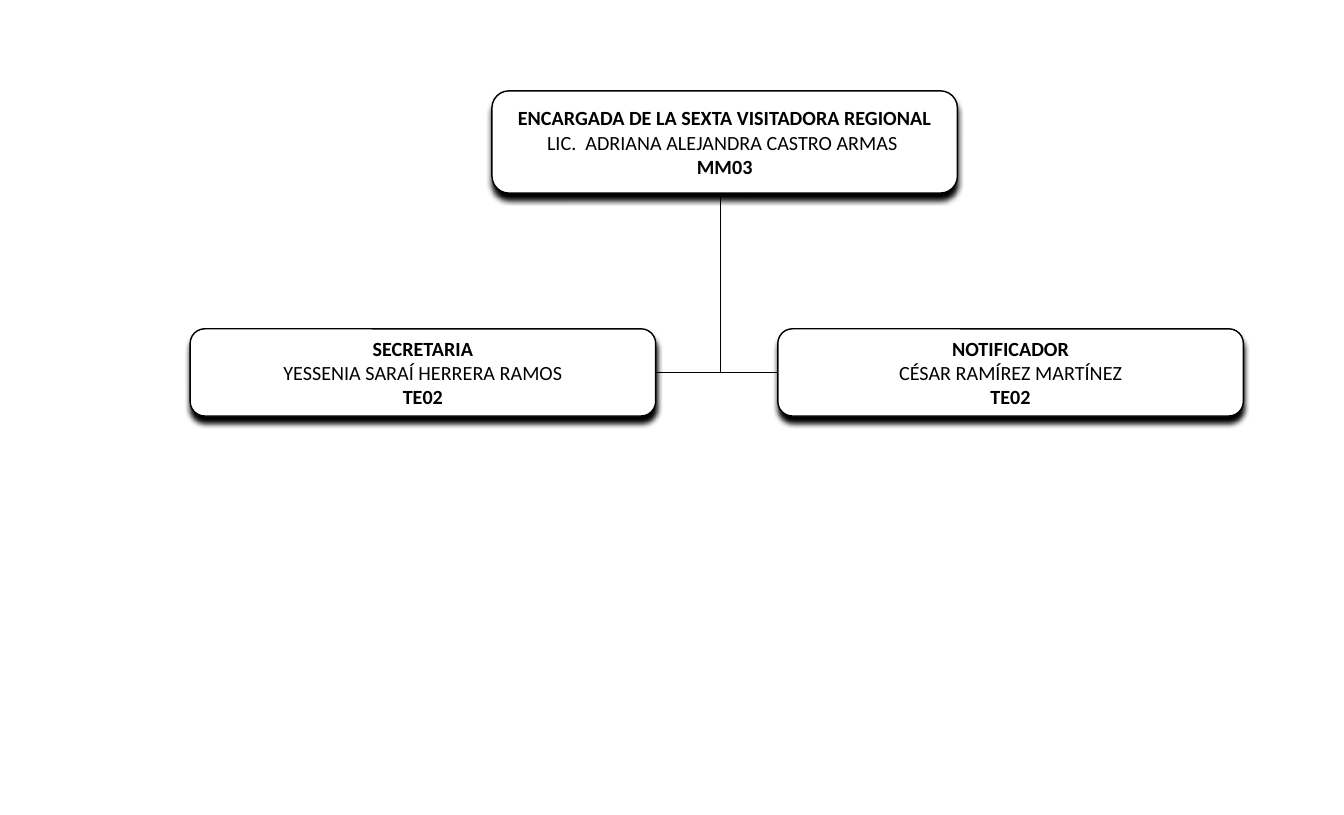
from dataclasses import dataclass

from lxml.etree import SubElement
from pptx import Presentation
from pptx.dml.color import RGBColor
from pptx.enum.shapes import MSO_CONNECTOR as Connector, MSO_SHAPE as Shape
from pptx.enum.text import MSO_ANCHOR as Anchor, PP_ALIGN as Align
from pptx.oxml.ns import qn
from pptx.util import Cm, Pt


@dataclass(frozen=True)
class Theme:
    """Colours, type and line sizes of the chart."""
    ink: str = "000000"
    paper: str = "FFFFFF"
    font: str = "Calibri"
    text_size: float = 14
    border: float = 1
    link: float = 0.75
    shadow: float = 4


class OrgChart:
    """Draws posts and links on one slide in one style."""

    def __init__(self, slide, theme):
        """Keep the slide and its style."""
        self.slide, self.theme = slide, theme
        self.ink = RGBColor.from_string(theme.ink)
        self.paper = RGBColor.from_string(theme.paper)

    def post(self, left, top, height, lines, width=11.43):
        """Add a rounded box with title, holder and grade."""
        box = self.slide.shapes.add_shape(
            Shape.ROUNDED_RECTANGLE, Cm(left), Cm(top), Cm(width), Cm(height))
        box.fill.solid()
        box.fill.fore_color.rgb = self.paper
        box.line.color.rgb = self.ink
        box.line.width = Pt(self.theme.border)
        self.drop_shadow(box)
        frame = box.text_frame
        layout = {"word_wrap": False, "vertical_anchor": Anchor.MIDDLE,
                  "margin_left": Cm(0.43), "margin_right": Cm(0.43),
                  "margin_top": Cm(0.23), "margin_bottom": Cm(0.23)}
        for name, value in layout.items():
            setattr(frame, name, value)
        for index, (line, bold) in enumerate(zip(lines, (True, False, True))):
            paragraph = frame.add_paragraph() if index else frame.paragraphs[0]
            paragraph.alignment = Align.CENTER
            run = paragraph.add_run()
            run.text = line
            style = {"name": self.theme.font, "size": Pt(self.theme.text_size), "bold": bold}
            for name, value in style.items():
                setattr(run.font, name, value)
            run.font.color.rgb = self.ink
        return box

    def drop_shadow(self, box):
        """Give a box a soft shadow straight below it."""
        box.shadow.inherit = False
        effects = box._element.spPr.find(qn("a:effectLst"))
        size = str(Pt(self.theme.shadow))
        shadow = SubElement(effects, qn("a:outerShdw"), blurRad=size, dist=size,
                            dir="5400000", algn="t", rotWithShape="0")
        SubElement(shadow, qn("a:srgbClr"), val=self.theme.ink)

    def link(self, start, end):
        """Add a thin straight line between two points."""
        line = self.slide.shapes.add_connector(
            Connector.STRAIGHT, *(Cm(value) for value in (*start, *end)))
        line.line.color.rgb = self.ink
        line.line.width = Pt(self.theme.link)
        SubElement(line._element.spPr, qn("a:effectLst"))
        return line


def main():
    """Build the organisation chart and save it."""
    deck = Presentation()
    deck.slide_width, deck.slide_height = Cm(33), Cm(20)
    chart = OrgChart(deck.slides.add_slide(deck.slide_layouts[6]), Theme())

    chart.post(12.08, 2.23, 2.51, (
        "ENCARGADA DE LA SEXTA VISITADORA REGIONAL",
        "LIC.  ADRIANA ALEJANDRA CASTRO ARMAS ", "MM03"))

    staff_top, staff_height = 8.07, 2.14
    staff_middle = staff_top + staff_height / 2
    stem_x = 17.69
    chart.link((stem_x, 4.8), (stem_x, staff_middle))
    secretary, notifier = (
        chart.post(left, staff_top, staff_height, (title, holder, "TE02"))
        for left, title, holder in (
            (4.67, "SECRETARIA", "YESSENIA SARAÍ HERRERA RAMOS"),
            (19.1, "NOTIFICADOR", "CÉSAR RAMÍREZ MARTÍNEZ")))
    crossbar = chart.link((16.1, staff_middle), (19.1, staff_middle))
    crossbar.begin_connect(secretary, 3)
    crossbar.end_connect(notifier, 1)

    deck.save("out.pptx")


if __name__ == "__main__":
    main()
